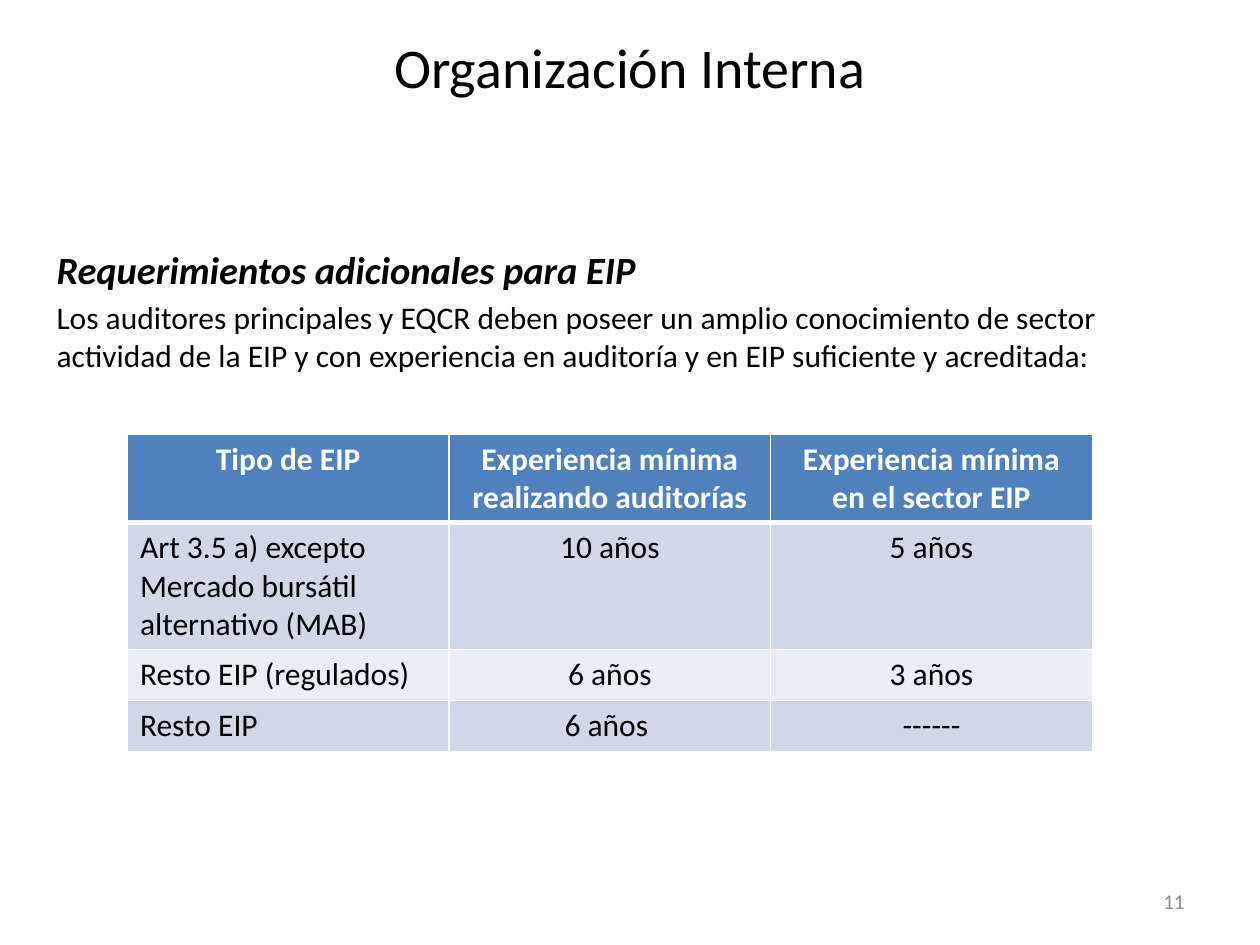
from lxml import etree
from pptx import Presentation
from pptx.dml.color import RGBColor
from pptx.enum.text import MSO_ANCHOR, PP_ALIGN
from pptx.oxml.ns import qn
from pptx.util import Cm, Pt

LEFT, CENTER, RIGHT = PP_ALIGN.LEFT, PP_ALIGN.CENTER, PP_ALIGN.RIGHT
TOP, MIDDLE = MSO_ANCHOR.TOP, MSO_ANCHOR.MIDDLE

FONT = "Calibri"
BLACK, WHITE, GRAY = "000000", "FFFFFF", "8C8C8C"
HEADER_FILL = "4F81BD"
BAND_FILLS = ("D0D8E8", "E9EDF4")

ROWS = [
    ("Tipo de EIP", "Experiencia mínima realizando auditorías",
     "Experiencia mínima en el sector EIP"),
    ("Art 3.5 a) excepto Mercado bursátil alternativo (MAB)", "10 años", "5 años"),
    ("Resto EIP (regulados)", "6 años", "3 años"),
    ("Resto EIP", "6 años ", "------"),
]
ROW_HEIGHTS = (1.78, 2.56, 1.03, 1.03)


def color(value):
    return RGBColor.from_string(value)


def write_paragraph(paragraph, text, size, font_color=BLACK, align=LEFT, **formats):
    paragraph.text = text
    paragraph.alignment = align
    font = paragraph.font
    font.color.rgb = color(font_color)
    for name, value in {"name": FONT, "size": Pt(size), **formats}.items():
        setattr(font, name, value)


def add_text_frame(slide, box, anchor=TOP):
    frame = slide.shapes.add_textbox(*map(Cm, box)).text_frame
    frame.word_wrap = True
    frame.vertical_anchor = anchor
    return frame


def add_line(slide, box, text, size, font_color, align, anchor=TOP):
    frame = add_text_frame(slide, box, anchor)
    write_paragraph(frame.paragraphs[0], text, size, font_color, align)


def add_requirements(slide, box):
    frame = add_text_frame(slide, box)
    write_paragraph(frame.paragraphs[0], "Requerimientos adicionales para EIP", 22,
                    bold=True, italic=True)
    description = frame.add_paragraph()
    write_paragraph(description,
                    "Los auditores principales y EQCR deben poseer un amplio conocimiento "
                    "de sector actividad de la EIP y con experiencia en auditoría y en EIP "
                    "suficiente y acreditada:", 18)
    description.space_before = Pt(3.6)


def set_borders(cell, widths):
    """Draw white borders; widths maps each side (L, R, T, B) to points."""
    properties = cell._tc.get_or_add_tcPr()
    for index, (side, width) in enumerate(widths.items()):
        line = etree.Element(qn(f"a:ln{side}"), w=str(Pt(width)))
        fill = etree.SubElement(line, qn("a:solidFill"))
        etree.SubElement(fill, qn("a:srgbClr"), val=WHITE)
        properties.insert(index, line)


def add_experience_table(slide, box):
    table = slide.shapes.add_table(len(ROWS), len(ROWS[0]), *map(Cm, box)).table
    for row_index, texts in enumerate(ROWS):
        is_header = row_index == 0
        table.rows[row_index].height = Cm(ROW_HEIGHTS[row_index])
        fill = HEADER_FILL if is_header else BAND_FILLS[(row_index - 1) % 2]
        for column_index, text in enumerate(texts):
            cell = table.cell(row_index, column_index)
            cell.fill.solid()
            cell.fill.fore_color.rgb = color(fill)
            set_borders(cell, {"L": 1, "R": 1, "T": 3 if row_index == 1 else 1,
                               "B": 3 if is_header else 1})
            write_paragraph(cell.text_frame.paragraphs[0], text, 18,
                            WHITE if is_header else BLACK,
                            CENTER if is_header or column_index else LEFT,
                            bold=is_header)


def main():
    presentation = Presentation()
    presentation.slide_width, presentation.slide_height = Cm(25.4), Cm(19.05)
    slide = presentation.slides.add_slide(presentation.slide_layouts[6])
    add_requirements(slide, (0.89, 4.83, 23.39, 13.28))
    add_line(slide, (18.2, 17.66, 5.93, 1.01), "11", 12, GRAY, RIGHT, MIDDLE)
    add_experience_table(slide, (2.57, 8.75, 19.45, sum(ROW_HEIGHTS)))
    add_line(slide, (0, 0.53, 25.4, 2.39), "Organización Interna", 32, BLACK, CENTER)
    presentation.save("out.pptx")


if __name__ == "__main__":
    main()
